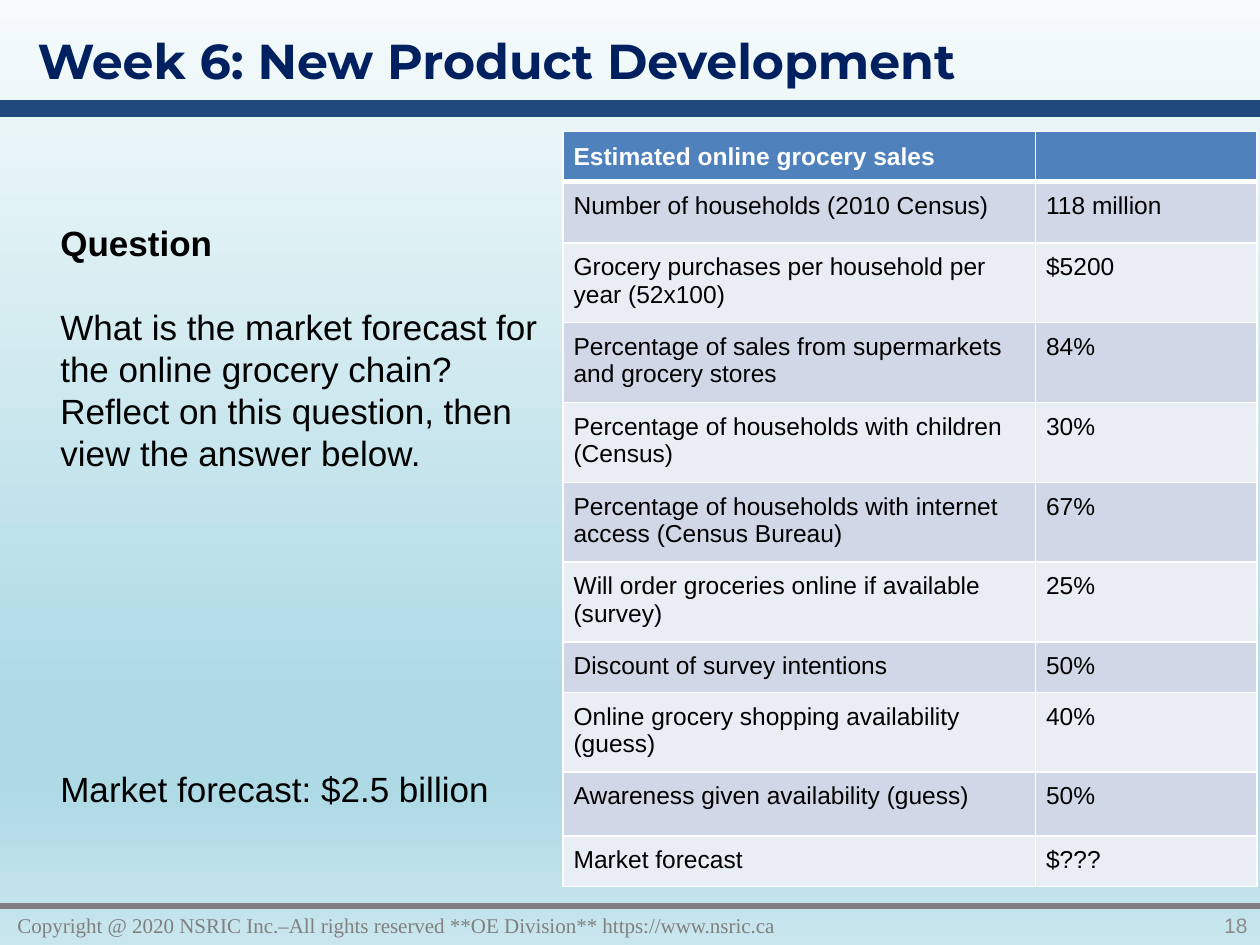
from lxml import etree
from pptx import Presentation
from pptx.dml.color import RGBColor
from pptx.enum.shapes import MSO_CONNECTOR
from pptx.enum.text import MSO_ANCHOR, MSO_AUTO_SIZE, PP_ALIGN
from pptx.oxml.ns import qn
from pptx.util import Pt

STRAIGHT = MSO_CONNECTOR.STRAIGHT
TOP, MIDDLE, BOTTOM = MSO_ANCHOR.TOP, MSO_ANCHOR.MIDDLE, MSO_ANCHOR.BOTTOM
LEFT, RIGHT = PP_ALIGN.LEFT, PP_ALIGN.RIGHT
FIT_SHAPE, NO_FIT = MSO_AUTO_SIZE.SHAPE_TO_FIT_TEXT, MSO_AUTO_SIZE.NONE

BLACK = RGBColor(0x00, 0x00, 0x00)
WHITE = RGBColor(0xFF, 0xFF, 0xFF)
TITLE_NAVY = RGBColor(0x00, 0x20, 0x60)
RULE_BLUE = RGBColor(0x1F, 0x49, 0x7D)
FOOTER_GRAY = RGBColor(0x80, 0x80, 0x80)
NUMBER_GRAY = RGBColor(0x8C, 0x8C, 0x8C)
HEADER_BLUE = RGBColor(0x4F, 0x81, 0xBD)
BAND_DARK = RGBColor(0xD0, 0xD8, 0xE8)
BAND_LIGHT = RGBColor(0xE9, 0xED, 0xF4)
SKY_STOPS = [
    (0, RGBColor(0xF6, 0xFB, 0xFC)),
    (74, RGBColor(0xAE, 0xDA, 0xE5)),
    (83, RGBColor(0xAE, 0xDA, 0xE5)),
    (100, RGBColor(0xC9, 0xE6, 0xEE)),
]

PAGE_WIDTH, PAGE_HEIGHT = 720, 540
LINE_PITCH = 24
CELL_MARGIN = 6
COLUMN_WIDTHS = (270, 126.6)
ONE_LINE, TWO_LINES = 28.6, 45.6

QUESTION_LINES = [
    ("Question", 0),
    ("What is the market forecast for", LINE_PITCH),
    ("the online grocery chain?", 0),
    ("Reflect on this question, then", 0),
    ("view the answer below.", 0),
    ("Market forecast: $2.5 billion", 7 * LINE_PITCH),
]

SALES_ROWS = [
    ("Estimated online grocery sales", "", ONE_LINE),
    ("Number of households (2010 Census)", "118 million", 35),
    ("Grocery purchases per household per year (52x100)", "$5200", TWO_LINES),
    ("Percentage of sales from supermarkets and grocery stores", "84%", TWO_LINES),
    ("Percentage of households with children (Census)", "30%", TWO_LINES),
    ("Percentage of households with internet access (Census Bureau)", "67%", TWO_LINES),
    ("Will order groceries online if available (survey)", "25%", TWO_LINES),
    ("Discount of survey intentions", "50%", ONE_LINE),
    ("Online grocery shopping availability (guess)", "40%", TWO_LINES),
    ("Awareness given availability (guess)", "50%", 36.5),
    ("Market forecast", "$???", ONE_LINE),
]


def paint_background(page):
    fill = page.background.fill
    fill.gradient()
    fill.gradient_angle = 270
    stops = page.element.find(".//" + qn("a:gsLst"))
    for stop in list(stops):
        stops.remove(stop)
    for percent, color in SKY_STOPS:
        stop = etree.SubElement(stops, qn("a:gs"), pos=str(percent * 1000))
        etree.SubElement(stop, qn("a:srgbClr"), val=str(color))


def add_rule(page, top, color, weight):
    rule = page.shapes.add_connector(
        STRAIGHT, Pt(0), Pt(top), Pt(PAGE_WIDTH), Pt(top))
    rule.line.color.rgb = color
    rule.line.width = Pt(weight)
    etree.SubElement(rule.element.spPr, qn("a:effectLst"))


def style_text(para, font_name, size, color, bold=False):
    for span in para.runs:
        span.font.name = font_name
        span.font.size = Pt(size)
        span.font.color.rgb = color
        span.font.bold = bold


def add_box(page, bounds, anchor=TOP, auto_size=NO_FIT):
    box = page.shapes.add_textbox(*(Pt(length) for length in bounds))
    frame = box.text_frame
    frame.word_wrap = True
    frame.auto_size = auto_size
    frame.vertical_anchor = anchor
    return frame


def add_label(page, bounds, text, font_name, size, color, bold=False,
              align=LEFT, anchor=MIDDLE, auto_size=NO_FIT):
    frame = add_box(page, bounds, anchor, auto_size)
    frame.text = text
    para = frame.paragraphs[0]
    para.alignment = align
    style_text(para, font_name, size, color, bold)


def add_question(page):
    frame = add_box(page, (27.4, 123.1, 684, 346.3), auto_size=FIT_SHAPE)
    for index, (text, gap) in enumerate(QUESTION_LINES):
        para = frame.add_paragraph() if index else frame.paragraphs[0]
        para.text = text
        para.line_spacing = Pt(LINE_PITCH)
        para.space_before = Pt(gap)
        style_text(para, "Arial", 20, BLACK, bold=index == 0)


def set_borders(cell, top_weight, bottom_weight):
    properties = cell._tc.get_or_add_tcPr()
    weights = {"lnL": 1, "lnR": 1, "lnT": top_weight, "lnB": bottom_weight}
    for index, (side, weight) in enumerate(weights.items()):
        border = etree.Element(qn("a:" + side), w=str(Pt(weight)))
        paint = etree.SubElement(border, qn("a:solidFill"))
        etree.SubElement(paint, qn("a:srgbClr"), val=str(WHITE))
        properties.insert(index, border)


def fill_cell(cell, text, row):
    header = row == 0
    cell.margin_left = cell.margin_right = Pt(CELL_MARGIN)
    cell.margin_top = cell.margin_bottom = Pt(CELL_MARGIN)
    cell.vertical_anchor = BOTTOM if header else TOP
    cell.fill.solid()
    band = BAND_DARK if row % 2 else BAND_LIGHT
    cell.fill.fore_color.rgb = HEADER_BLUE if header else band
    cell.text = text
    para = cell.text_frame.paragraphs[0]
    style_text(para, "Arial", 14, WHITE if header else BLACK, header)
    if not text:
        etree.SubElement(para._p, qn("a:endParaRPr"), sz="1400")
    set_borders(cell, 3 if row == 1 else 1, 3 if header else 1)


def add_sales_table(page):
    height = sum(row[2] for row in SALES_ROWS)
    table = page.shapes.add_table(
        len(SALES_ROWS), len(COLUMN_WIDTHS), Pt(321.8), Pt(75),
        Pt(sum(COLUMN_WIDTHS)), Pt(height)).table
    for column, width in zip(table.columns, COLUMN_WIDTHS):
        column.width = Pt(width)
    for index, (label, value, row_height) in enumerate(SALES_ROWS):
        table.rows[index].height = Pt(row_height)
        fill_cell(table.cell(index, 0), label, index)
        fill_cell(table.cell(index, 1), value, index)


def main():
    deck = Presentation()
    deck.slide_width = Pt(PAGE_WIDTH)
    deck.slide_height = Pt(PAGE_HEIGHT)
    page = deck.slides.add_slide(deck.slide_layouts[6])
    paint_background(page)
    add_rule(page, 62, RULE_BLUE, 10)
    add_rule(page, 517.7, FOOTER_GRAY, 3)
    add_label(page, (2.9, 517.7, 595.4, 22.3),
              "Copyright @ 2020 NSRIC Inc.–All rights reserved "
              "**OE Division** https://www.nsric.ca",
              "Times New Roman", 12, FOOTER_GRAY)
    add_label(page, (618.5, 517.7, 101.5, 22.3), "18", "Arial", 12,
              NUMBER_GRAY, align=RIGHT)
    add_question(page)
    add_label(page, (14.4, 13.7, 630.7, 41), "Week 6: New Product Development",
              "Montserrat", 28, TITLE_NAVY, bold=True, anchor=TOP,
              auto_size=FIT_SHAPE)
    add_sales_table(page)
    deck.save("out.pptx")


if __name__ == "__main__":
    main()
